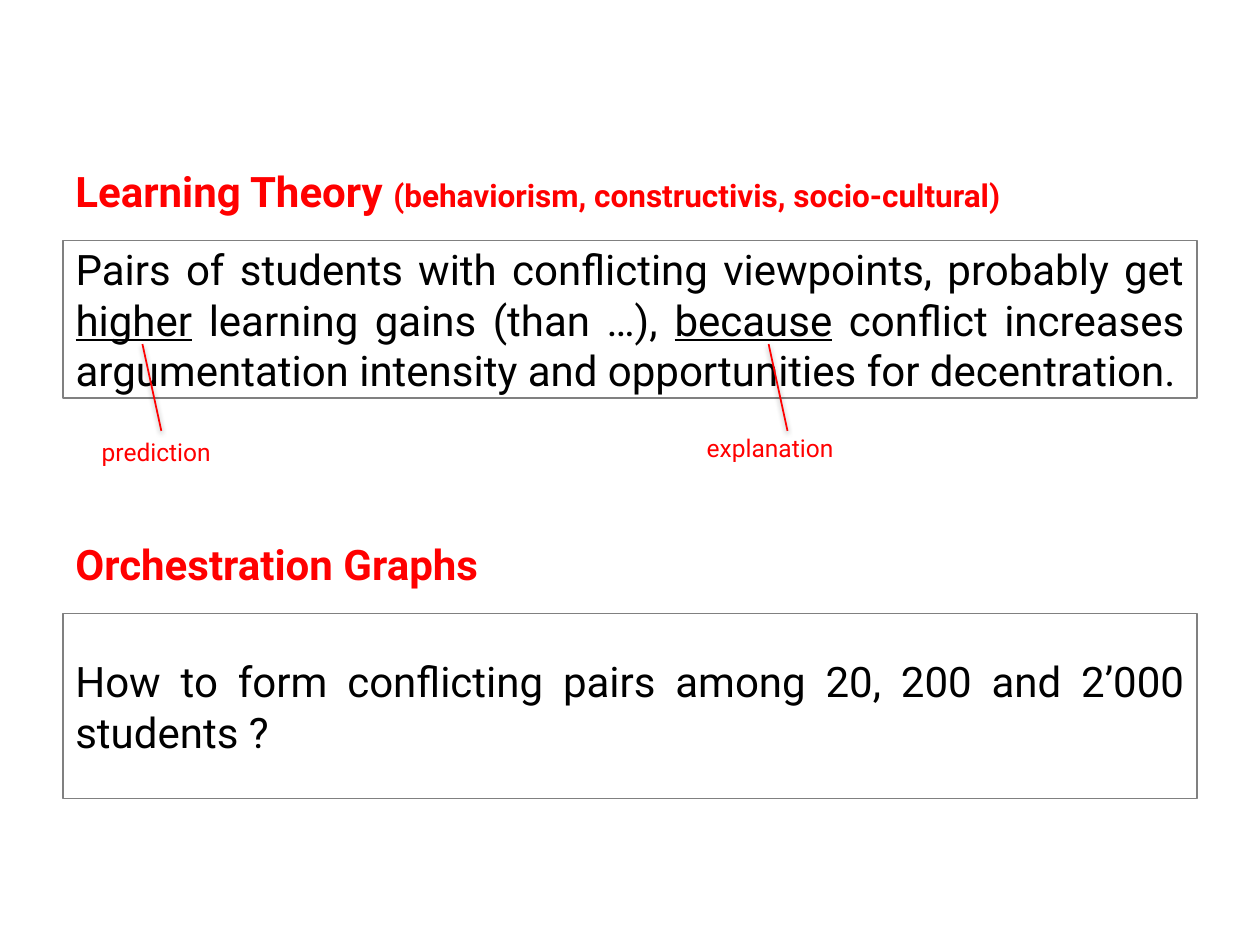
import lxml.etree
import pptx
import pptx.dml.color
import pptx.enum.shapes
import pptx.enum.text
import pptx.oxml
import pptx.oxml.ns
import pptx.util

Pt = pptx.util.Pt
ALIGN = pptx.enum.text.PP_ALIGN
ANCHOR = pptx.enum.text.MSO_ANCHOR
AUTO_SIZE = pptx.enum.text.MSO_AUTO_SIZE
RED, BLACK, GREY = "FF0000", "000000", "808080"
LEFT, WIDTH = 36, 648

LINE_SHADOW = (
    f'<a:effectLst {pptx.oxml.ns.nsdecls("a")}>'
    '<a:outerShdw blurRad="39370" dist="20320" dir="5400000" rotWithShape="0">'
    '<a:srgbClr val="000000"><a:alpha val="38000"/></a:srgbClr>'
    '</a:outerShdw></a:effectLst>'
)


def rgb(color):
    return pptx.dml.color.RGBColor.from_string(color)


def add_run(p, text, size=24, color=BLACK, bold=False, underline=False):
    r = p.add_run()
    r.text = text
    r.font.name = "Roboto"
    r.font.size = Pt(size)
    r.font.color.rgb = rgb(color)
    r.font.bold = bold
    r.font.underline = underline


def place(sp, left, top, width, height):
    sp.left, sp.top, sp.width, sp.height = Pt(left), Pt(top), Pt(width), Pt(height)


def prepare_text(sp, align=ALIGN.LEFT, anchor=ANCHOR.MIDDLE):
    """Set up wrapping and alignment, and return the first paragraph."""
    tf = sp.text_frame
    tf.word_wrap = True
    tf.auto_size = AUTO_SIZE.NONE
    tf.vertical_anchor = anchor
    p = tf.paragraphs[0]
    p.alignment = align
    return p


def frame(sp, top, height):
    """Make a grey-outlined statement box and return its paragraph."""
    place(sp, LEFT, top, WIDTH, height)
    sp.fill.background()
    sp.line.color.rgb = rgb(GREY)
    sp.line.width = Pt(0.75)
    return prepare_text(sp, align=ALIGN.JUSTIFY)


def add_heading(s, top, text, detail=""):
    sp = s.shapes.add_textbox(Pt(LEFT), Pt(top), Pt(WIDTH), Pt(90))
    p = prepare_text(sp)
    add_run(p, text, color=RED, bold=True)
    if detail:
        add_run(p, detail, size=18, color=RED, bold=True)


def add_label(s, left, top, text):
    sp = s.shapes.add_textbox(Pt(left), Pt(top), Pt(206), Pt(24.5))
    p = prepare_text(sp, anchor=ANCHOR.TOP)
    add_run(p, text, size=14, color=RED)


def add_pointer(s, x):
    """Draw a slanted line from a label up to an underlined word."""
    line = s.shapes.add_connector(
        pptx.enum.shapes.MSO_CONNECTOR.STRAIGHT,
        Pt(x), Pt(246.2), Pt(x - 10.8), Pt(196.6))
    line.line.color.rgb = rgb(RED)
    line.line.width = Pt(1)
    line._element.spPr.append(pptx.oxml.parse_xml(LINE_SHADOW))


def main():
    prs = pptx.Presentation()
    prs.slide_width, prs.slide_height = Pt(720), Pt(540)
    s = prs.slides.add_slide(prs.slide_layouts[5])

    p = frame(s.shapes.title, 137.5, 90)
    add_run(p, "Pairs of students with conflicting viewpoints, probably get ")
    add_run(p, "higher", underline=True)
    add_run(p, " learning gains (than …), ")
    add_run(p, "because", underline=True)
    add_run(p, " conflict increases argumentation intensity and "
               "opportunities for decentration.")
    add_heading(s, 64, "Learning Theory ",
                "(behaviorism, constructivis, socio-cultural)")

    add_label(s, 51, 246.2, "prediction")
    add_label(s, 396.7, 244, "explanation")
    for x in (92.2, 450):
        add_pointer(s, x)

    question = s.shapes.add_shape(
        pptx.enum.shapes.MSO_SHAPE.RECTANGLE, 0, 0, 0, 0)
    question.shadow.inherit = False
    p = frame(question, 350.6, 105.8)
    add_run(p, "How to form conflicting pairs among 20, 200 and 2’000 students ?")
    add_heading(s, 277.2, "Orchestration Graphs")

    prs.save("out.pptx")


if __name__ == "__main__":
    main()
